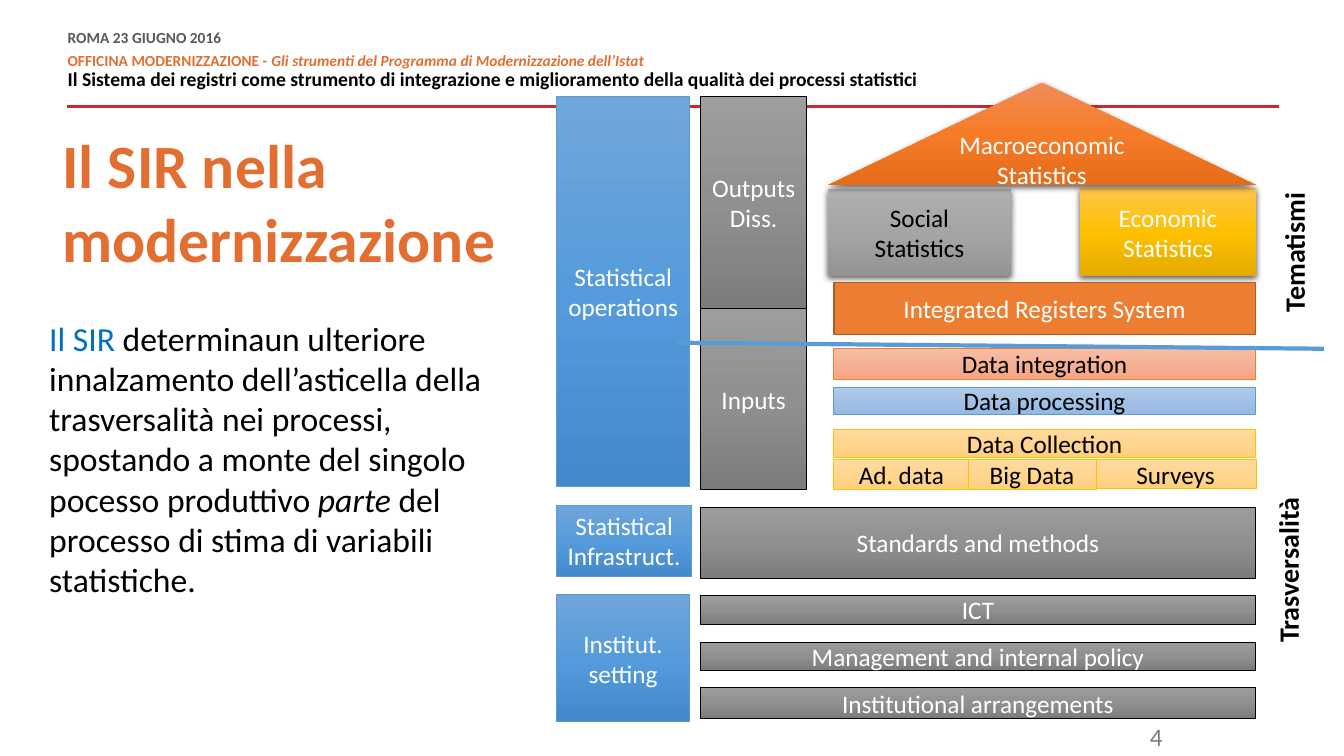
from dataclasses import dataclass
from typing import Any
from lxml.etree import SubElement
from pptx import Presentation
from pptx.dml.color import RGBColor
from pptx.enum.shapes import MSO_CONNECTOR, MSO_SHAPE
from pptx.enum.text import MSO_ANCHOR, MSO_AUTO_SIZE, PP_ALIGN
from pptx.oxml.ns import qn
from pptx.util import Inches, Pt

COLOURS = {
    "white": "FFFFFF", "black": "000000", "red": "C72A31", "orange": "E26F31",
    "grey": "595959", "page": "7F7F7F", "blue": "0070C0", "divider": "5B9BD5",
    "register": "ED7D31", "register_edge": "AF5C24", "gold": "FFC000",
}
GRADIENTS = {
    "blue": ("71A6DB", "559BDB", "448ACA"),
    "grey": ("9D9D9D", "909090", "7C7C7C"),
    "pale_blue": ("B1CBE9", "A3C1E5", "93B9E4"),
    "pale_gold": ("FFDB9E", "FFD590", "FFD07C"),
    "pale_orange": ("F7BDA5", "F5B196", "F8A582"),
    "light_grey": ("AFAFAF", "A5A5A5", "939393"),
    "gold": ("FFC64B", "FFC000", "E3AB00"),
    "orange": ("F18C57", "F67B28", "E56C19"),
}


def rgb(name):
    return RGBColor.from_string(COLOURS[name])


@dataclass
class Board:
    slide: Any
    font: str = "Calibri"
    size: float = 18

    def run(self, paragraph, text, colour="black", size=None, bold=False, italic=False):
        run = paragraph.add_run()
        run.text = text
        run.font.name = self.font
        run.font.size = Pt(size or self.size)
        run.font.bold = bold
        run.font.italic = italic
        run.font.color.rgb = rgb(colour)

    def text(self, place, paragraphs, inset=True, wrap=True, grow=False, rotation=0):
        box = self.slide.shapes.add_textbox(*map(Inches, place))
        box.rotation = rotation
        frame = box.text_frame
        frame.word_wrap = wrap
        frame.auto_size = MSO_AUTO_SIZE.SHAPE_TO_FIT_TEXT if grow else MSO_AUTO_SIZE.NONE
        if not inset:
            frame.margin_left = frame.margin_right = 0
            frame.margin_top = frame.margin_bottom = 0
        for index, runs in enumerate(paragraphs):
            paragraph = frame.add_paragraph() if index else frame.paragraphs[0]
            for text, style in runs:
                self.run(paragraph, text, **style)
        return frame.paragraphs

    def line(self, start, end, colour, width):
        line = self.slide.shapes.add_connector(
            MSO_CONNECTOR.STRAIGHT, *map(Inches, start + end))
        line.line.color.rgb = rgb(colour)
        line.line.width = Pt(width)
        SubElement(line._element.spPr, qn("a:effectLst"))

    def gradient(self, block, name):
        block.fill.gradient()
        block.fill.gradient_angle = 270
        stops = block._element.spPr.find(".//" + qn("a:gsLst"))
        for stop in list(stops):
            stops.remove(stop)
        for index, colour in enumerate(GRADIENTS[name]):
            stop = SubElement(stops, qn("a:gs"), pos=str(index * 50000))
            SubElement(stop, qn("a:srgbClr"), val=colour)

    def cast_shadow(self, block):
        effects = block._element.spPr.find(qn("a:effectLst"))
        shadow = SubElement(effects, qn("a:outerShdw"), blurRad=str(Pt(4.5)),
                            dist=str(Pt(1.5)), dir="5400000", algn="ctr", rotWithShape="0")
        colour = SubElement(shadow, qn("a:srgbClr"), val=COLOURS["black"])
        SubElement(colour, qn("a:alpha"), val="63000")

    def block(self, place, lines, fill, edge=None, colour="white",
              preset=MSO_SHAPE.RECTANGLE, width=0.5):
        block = self.slide.shapes.add_shape(preset, *map(Inches, place))
        block.shadow.inherit = False
        if fill in GRADIENTS:
            self.gradient(block, fill)
        else:
            block.fill.solid()
            block.fill.fore_color.rgb = rgb(fill)
        if edge:
            block.line.color.rgb = rgb(edge)
            block.line.width = Pt(width)
        else:
            block.line.fill.background()
            self.cast_shadow(block)
        frame = block.text_frame
        frame.word_wrap = True
        frame.vertical_anchor = MSO_ANCHOR.MIDDLE
        for index, text in enumerate(lines):
            paragraph = frame.add_paragraph() if index else frame.paragraphs[0]
            paragraph.alignment = PP_ALIGN.CENTER
            self.run(paragraph, text, colour)


def build(board):
    board.line((12.69, 1.06), (0.66, 1.06), "red", 2)
    event, programme, subject = board.text((0.67, 0.31, 10.02, 0.6), [
        [("ROMA 23 GIUGNO 2016", dict(colour="grey", size=11, bold=True))],
        [("OFFICINA MODERNIZZAZIONE - ", dict(colour="orange", size=11, bold=True)),
         ("Gli strumenti del Programma di Modernizzazione dell’Istat",
          dict(colour="orange", size=11, bold=True, italic=True))],
        [("Il Sistema dei registri come strumento di integrazione e miglioramento "
          "della qualità dei processi statistici", dict(size=14, bold=True))],
    ], inset=False, grow=True)
    event.line_spacing = programme.line_spacing = Pt(10.8)
    event.space_after = Pt(6)
    subject.line_spacing = 0.9

    page, = board.text((8.63, 7.11, 3, 0.4), [[("4", dict(colour="page"))]])
    page.alignment = PP_ALIGN.RIGHT

    heading = dict(colour="orange", size=44, bold=True)
    title, = board.text((0.62, 1.26, 4.45, 2.11), [[("Il SIR nella", heading)]], inset=False)
    title.add_line_break()
    board.run(title, "modernizzazione", **heading)

    for top, width, height, lines in (
        (5.9, 1.32, 1.26, ["Institut. setting"]),
        (5.01, 1.34, 0.71, ["Statistical", "Infrastruct."]),
        (0.96, 1.32, 3.87, ["Statistical", "operations"]),
    ):
        board.block((5.52, top, width, height), lines, "blue", "divider")

    for top, width, height, lines in (
        (5.03, 5.5, 0.71, ["Standards and methods"]),
        (5.91, 5.5, 0.28, ["ICT"]),
        (6.37, 5.5, 0.28, ["Management and internal policy"]),
        (6.82, 5.5, 0.31, ["Institutional arrangements"]),
        (0.96, 1.05, 2.1, ["Outputs", "Diss."]),
        (3.06, 1.05, 1.8, ["Inputs"]),
    ):
        board.block((6.95, top, width, height), lines, "grey", "black")

    for place, label, fill, edge in (
        ((8.27, 3.84, 4.18, 0.27), "Data processing", "pale_blue", "divider"),
        ((8.27, 4.26, 4.18, 0.28), "Data Collection", "pale_gold", "gold"),
        ((8.27, 4.56, 1.34, 0.3), "Ad. data", "pale_gold", "gold"),
        ((10.86, 4.56, 1.6, 0.29), "Surveys", "pale_gold", "gold"),
        ((9.6, 4.56, 1.27, 0.3), "Big Data", "pale_gold", "gold"),
        ((8.27, 3.46, 4.18, 0.3), "Data integration", "pale_orange", "register"),
    ):
        board.block(place, [label], fill, edge, "black")

    board.block((8.21, 1.88, 1.82, 0.86), ["Social", "Statistics"], "light_grey", colour="black")
    board.block((10.71, 1.87, 1.75, 0.87), ["Economic", "Statistics"], "gold")
    board.block((8.21, 0.82, 4.25, 1.02), ["Macroeconomic Statistics"], "orange",
                preset=MSO_SHAPE.ISOSCELES_TRIANGLE)
    board.block((8.27, 2.8, 4.18, 0.52), ["Integrated Registers System"],
                "register", "register_edge", width=1)

    for place, label in (((11.82, 5.3, 1.91, 0.44), "Trasversalità"),
                         ((12.05, 2.19, 1.57, 0.44), "Tematismi")):
        board.text(place, [[(label, dict(size=20, bold=True))]],
                   wrap=False, grow=True, rotation=270)
    board.line((13.13, 3.46), (6.72, 3.4), "divider", 3)

    board.text((0.39, 3.1, 4.94, 3.4), [[
        ("Il SIR ", dict(colour="blue", size=24)),
        ("determinaun ulteriore innalzamento dell’asticella della trasversalità nei "
         "processi, spostando a monte del singolo pocesso produttivo ", dict(size=24)),
        ("parte", dict(size=24, italic=True)),
        (" del processo di stima di variabili statistiche.", dict(size=24)),
    ]], grow=True)


def main():
    deck = Presentation()
    deck.slide_width, deck.slide_height = Inches(13.33), Inches(7.5)
    build(Board(deck.slides.add_slide(deck.slide_layouts[6])))
    deck.save("out.pptx")


if __name__ == "__main__":
    main()
